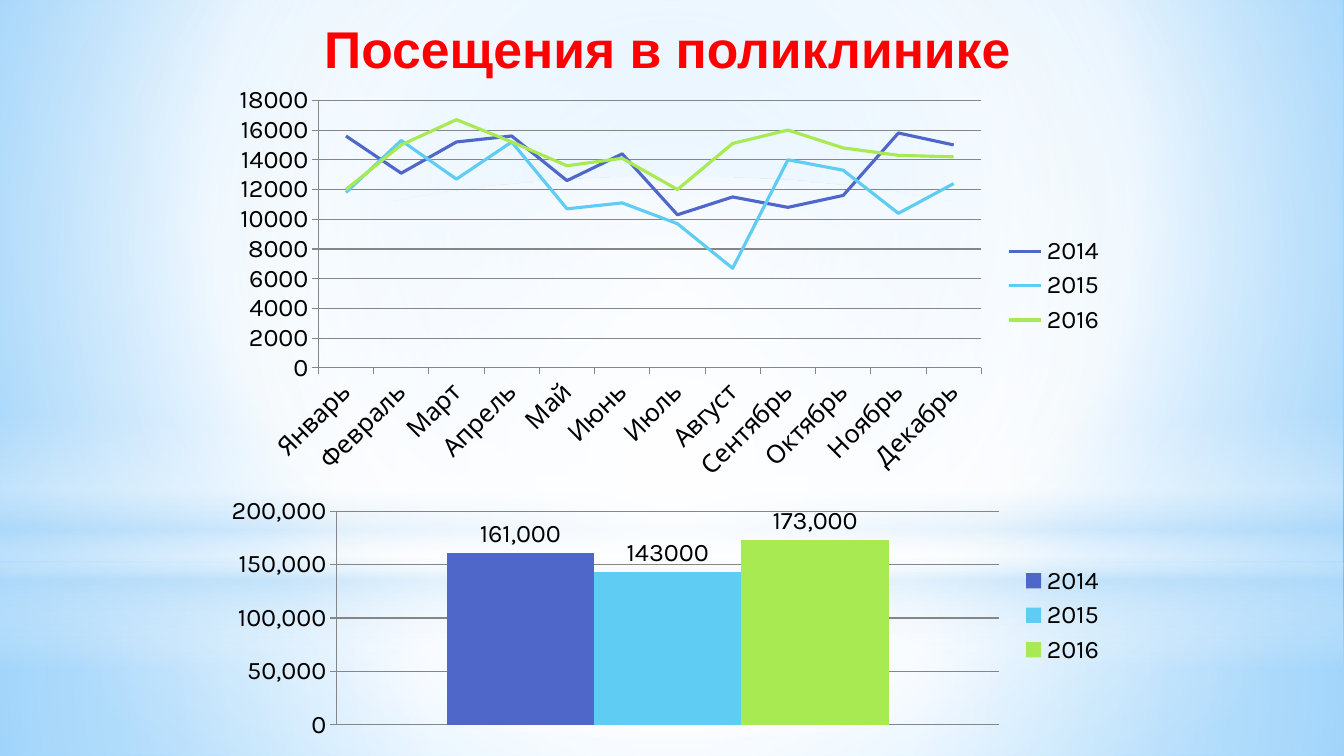
from lxml import etree
from pptx import Presentation
from pptx.chart.data import CategoryChartData
from pptx.dml.color import RGBColor
from pptx.enum.chart import XL_CHART_TYPE, XL_LABEL_POSITION, XL_LEGEND_POSITION, XL_TICK_MARK
from pptx.enum.shapes import MSO_SHAPE
from pptx.enum.text import MSO_ANCHOR, PP_ALIGN
from pptx.oxml import parse_xml
from pptx.oxml.ns import nsdecls, qn
from pptx.util import Pt

RECTANGLE, OVAL = MSO_SHAPE.RECTANGLE, MSO_SHAPE.OVAL
LINE, COLUMN = XL_CHART_TYPE.LINE, XL_CHART_TYPE.COLUMN_CLUSTERED
LEGEND_RIGHT = XL_LEGEND_POSITION.RIGHT
ABOVE_BAR = XL_LABEL_POSITION.OUTSIDE_END
TICK_OUT, TICK_NONE = XL_TICK_MARK.OUTSIDE, XL_TICK_MARK.NONE
MIDDLE, CENTER = MSO_ANCHOR.MIDDLE, PP_ALIGN.CENTER

WIDTH, HEIGHT = 960, 540
CHART_LEFT, CHART_WIDTH = 157, 640
GRID_COLOR = "868686"
YEAR_COLORS = {"2014": "4E67C8", "2015": "5ECCF3", "2016": "A7EA52"}
MONTHS = ["Январь", "Февраль", "Март", "Апрель", "Май", "Июнь", "Июль",
          "Август", "Сентябрь", "Октябрь", "Ноябрь", "Декабрь"]
MONTHLY_VISITS = {
    "2014": [15600, 13100, 15200, 15600, 12600, 14400,
             10300, 11500, 10800, 11600, 15800, 15000],
    "2015": [11800, 15300, 12700, 15200, 10700, 11100,
             9700, 6700, 14000, 13300, 10400, 12400],
    "2016": [12000, 15000, 16700, 15200, 13600, 14100,
             12000, 15100, 16000, 14800, 14300, 14200],
}
YEARLY_VISITS = {"2014": [161000], "2015": [143000], "2016": [173000]}
LABEL_FORMATS = {"2014": "#,##0", "2015": "General", "2016": "#,##0"}


def color(value):
    """Turn a hex string into a colour."""
    return RGBColor.from_string(value)


def set_gradient(fill, properties, stops, focus=None):
    """Fill with (position, colour, opacity) stops, round the focus or downwards."""
    fill.solid()
    marks = "".join(
        f'<a:gs pos="{position * 1000}"><a:srgbClr val="{shade}">'
        f'<a:alpha val="{opacity * 1000}"/></a:srgbClr></a:gs>'
        for position, shade, opacity in stops)
    if focus:
        sides = " ".join(f'{side}="{part * 1000}"' for side, part in zip("ltrb", focus))
        direction = f'<a:path path="circle"><a:fillToRect {sides}/></a:path>'
    else:
        direction = '<a:lin ang="5400000" scaled="0"/>'
    gradient = parse_xml(f'<a:gradFill {nsdecls("a")} rotWithShape="1">'
                         f'<a:gsLst>{marks}</a:gsLst>{direction}</a:gradFill>')
    properties.replace(properties.find(qn("a:solidFill")), gradient)


def add_glow(slide, kind, top, height, stops, focus=None):
    """Add a full-width translucent band or oval."""
    glow = slide.shapes.add_shape(kind, Pt(0), Pt(top), Pt(WIDTH), Pt(height))
    glow.shadow.inherit = False
    glow.line.fill.background()
    set_gradient(glow.fill, glow._element.spPr, stops, focus)


def add_backdrop(slide):
    """Paint the blue and white backdrop."""
    background = slide.background
    background_fill = background.fill
    background_fill.solid()
    properties = slide._element.cSld.find(qn("p:bg")).find(qn("p:bgPr"))
    set_gradient(background_fill, properties,
                 [(0, "9ED5FF", 100), (60, "FFFFFF", 100), (100, "5BB9FF", 100)],
                 (20, 10, 20, 60))
    middle = (50, 50, 50, 50)
    add_glow(slide, RECTANGLE, 402, 138,
             [(0, "FFFFFF", 91), (37, "FFFFFF", 76), (100, "B4DCFA", 79)], middle)
    add_glow(slide, RECTANGLE, 0, 402,
             [(0, "FFFFFF", 89), (48, "FFFFFF", 62), (100, "B4DCFA", 79)], middle)
    add_glow(slide, RECTANGLE, 297, 180,
             [(0, "FFFFFF", 0), (29, "FFFFFF", 30), (45, "B4DCFA", 40),
              (55, "FFFFFF", 26), (65, "B4DCFA", 60), (100, "FFFFFF", 0)])
    add_glow(slide, OVAL, 126, 402, [(0, "FFFFFF", 100), (56, "FFFFFF", 0)], middle)


def add_title(slide, text):
    """Add the centred red heading."""
    title = slide.shapes.add_textbox(Pt(70), Pt(12), Pt(814), Pt(45))
    frame = title.text_frame
    frame.word_wrap = True
    frame.vertical_anchor = MIDDLE
    paragraph = frame.paragraphs[0]
    paragraph.alignment = CENTER
    run = paragraph.add_run()
    run.text = text
    run.font.name = "Arial"
    run.font.size = Pt(36.9)
    run.font.bold = True
    run.font.color.rgb = color("FF0000")


def set_plot_area(chart, area):
    """Place the inner plot area by fractions of the chart."""
    plot_area = chart._chartSpace.chart.plotArea
    for old_layout in plot_area.findall(qn("c:layout")):
        plot_area.remove(old_layout)
    layout = etree.Element(qn("c:layout"))
    manual = etree.SubElement(layout, qn("c:manualLayout"))
    settings = [("layoutTarget", "inner"), ("xMode", "edge"), ("yMode", "edge")]
    settings += zip("xywh", area)
    for name, value in settings:
        etree.SubElement(manual, qn(f"c:{name}"), val=str(value))
    plot_area.insert(0, layout)


def add_visits_chart(slide, kind, top, height, categories, visits, maximum, step, area):
    """Add a chart of visits with one series for each year."""
    data = CategoryChartData()
    data.categories = categories
    for year, values in visits.items():
        data.add_series(year, values)
    chart = slide.shapes.add_chart(
        kind, Pt(CHART_LEFT), Pt(top), Pt(CHART_WIDTH), Pt(height), data).chart
    chart.has_title = False
    chart.font.name = "Karla"
    chart.font.size = Pt(18)
    chart.font.color.rgb = color("000000")
    chart.has_legend = True
    chart.legend.position = LEGEND_RIGHT
    chart.legend.include_in_layout = False
    chart.plots[0].vary_by_categories = False
    scale = chart.value_axis
    scale.minimum_scale, scale.maximum_scale, scale.major_unit = 0, maximum, step
    scale.has_major_gridlines = True
    for line in (scale.major_gridlines.format.line, scale.format.line,
                 chart.category_axis.format.line):
        line.color.rgb = color(GRID_COLOR)
        line.width = Pt(0.75)
    for axis in (scale, chart.category_axis):
        axis.major_tick_mark = TICK_OUT
        axis.minor_tick_mark = TICK_NONE
    set_plot_area(chart, area)
    return chart


def add_monthly_chart(slide):
    """Add the line chart of visits by month."""
    chart = add_visits_chart(slide, LINE, 57, 294, MONTHS, MONTHLY_VISITS,
                             18000, 2000, (0.11, 0.05, 0.74, 0.65))
    months = chart.category_axis
    months.tick_labels.font.size = Pt(18)
    months._element.txPr.find(qn("a:bodyPr")).set("rot", "-2700000")
    for series in chart.series:
        series.smooth = False
        series.format.line.color.rgb = color(YEAR_COLORS[series.name])
        series.format.line.width = Pt(2.25)


def add_yearly_chart(slide):
    """Add the column chart of visits by year."""
    chart = add_visits_chart(slide, COLUMN, 339, 201, ["1"], YEARLY_VISITS,
                             200000, 50000, (0.13, 0.13, 0.74, 0.76))
    chart.category_axis.visible = False
    chart.plots[0].gap_width = 150
    chart.plots[0].overlap = 0
    scale_labels = chart.value_axis.tick_labels
    scale_labels.number_format = "#,##0"
    scale_labels.number_format_is_linked = False
    for series in chart.series:
        series.format.fill.solid()
        series.format.fill.fore_color.rgb = color(YEAR_COLORS[series.name])
        labels = series.data_labels
        labels.show_value = True
        labels.position = ABOVE_BAR
        labels.number_format = LABEL_FORMATS[series.name]
        labels.number_format_is_linked = False


def main():
    """Build the slide about visits to the clinic."""
    presentation = Presentation()
    presentation.slide_width, presentation.slide_height = Pt(WIDTH), Pt(HEIGHT)
    slide = presentation.slides.add_slide(presentation.slide_layouts[6])
    add_backdrop(slide)
    add_title(slide, "Посещения в поликлинике")
    add_monthly_chart(slide)
    add_yearly_chart(slide)
    presentation.save("out.pptx")


if __name__ == "__main__":
    main()
